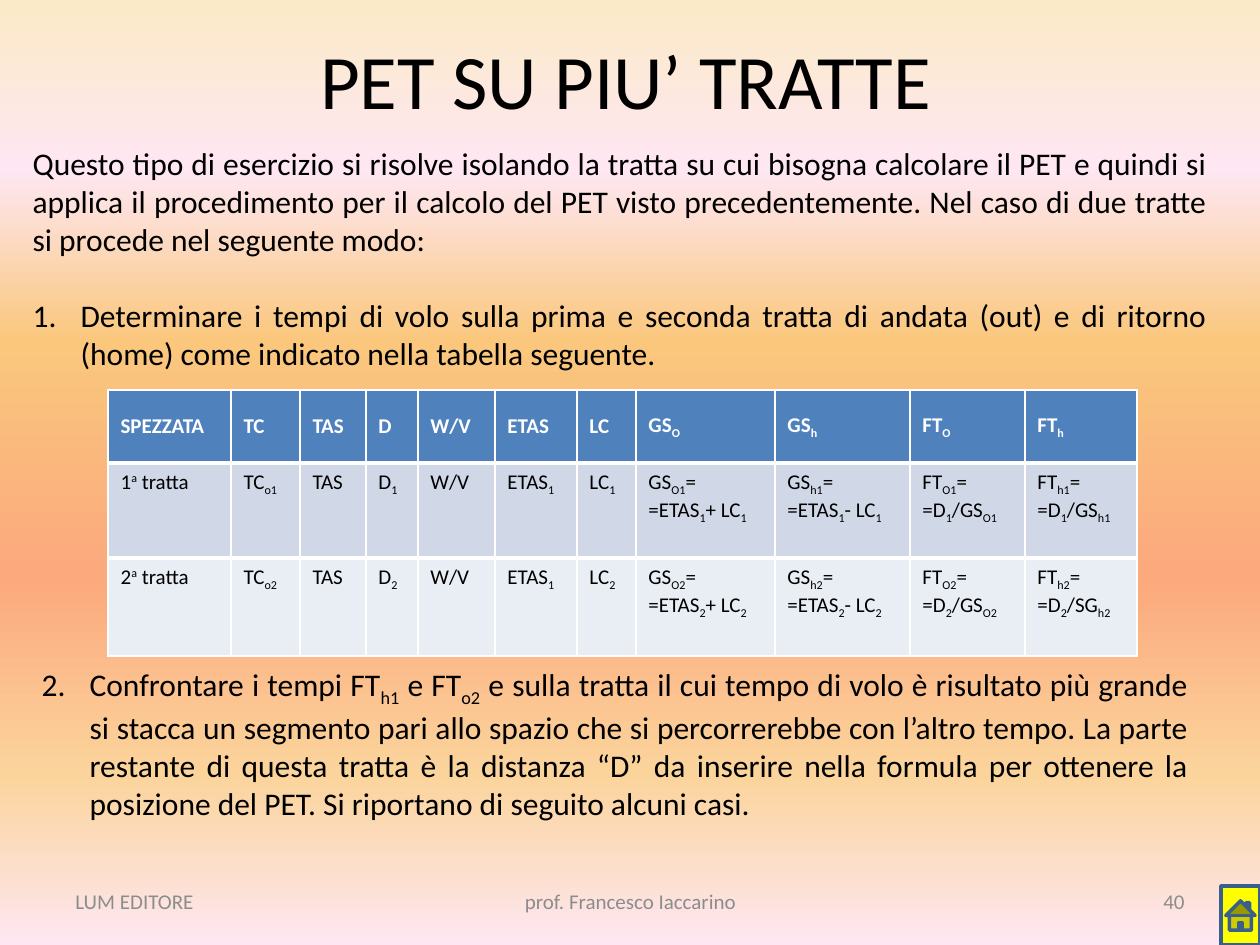
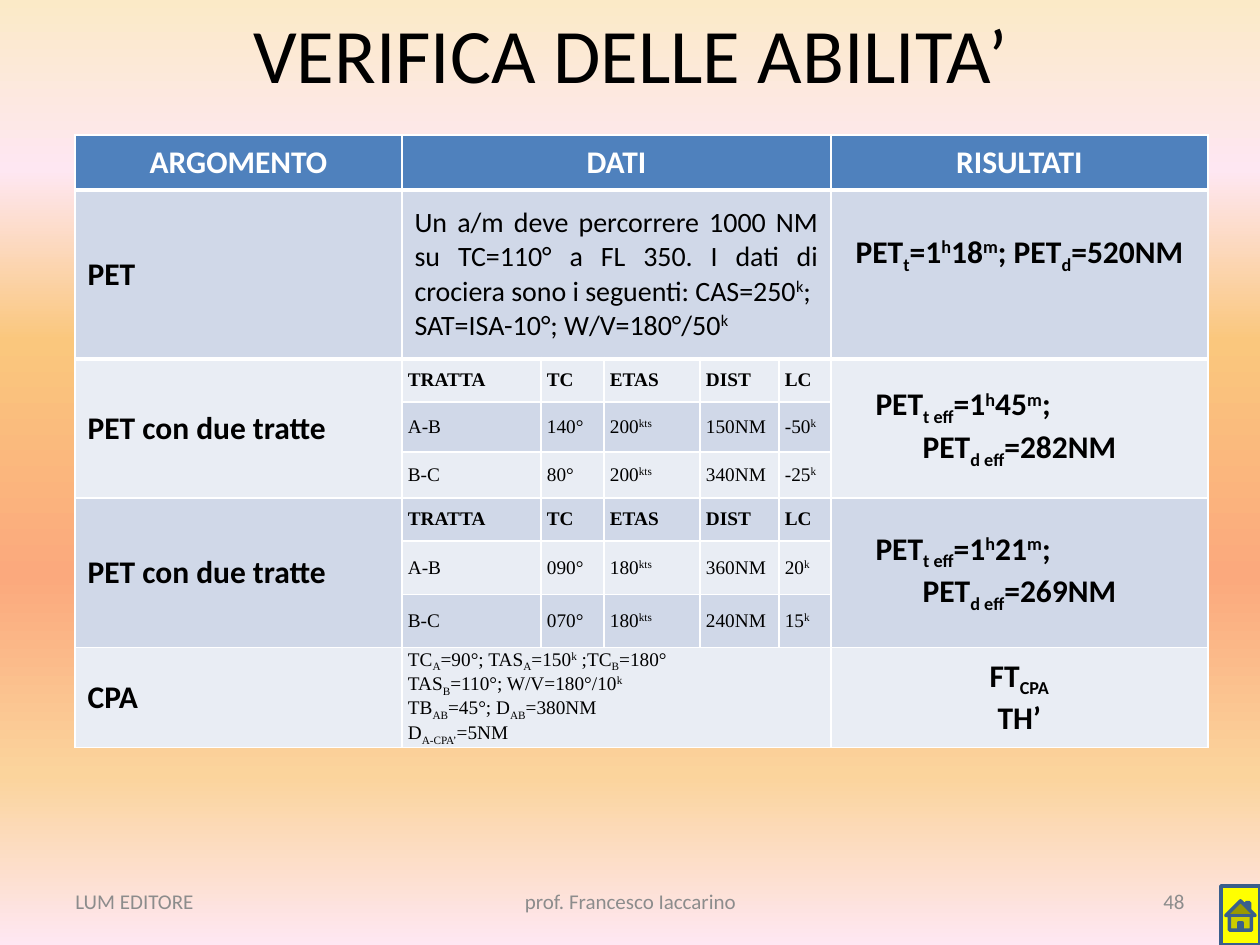
from lxml.etree import SubElement
from pptx import Presentation
from pptx.dml.color import RGBColor
from pptx.enum.shapes import MSO_SHAPE
from pptx.enum.text import MSO_ANCHOR, MSO_AUTO_SIZE, PP_ALIGN
from pptx.oxml.ns import qn
from pptx.util import Emu, Pt

PX_PER_INCH = 126
SLIDE_BOX = (0, 0, 1260, 945)
BLACK, WHITE, GREY = "000000", "FFFFFF", "8C8C8C"
HEADER_FILL, BAND_FILLS = "4F81BD", ("E9EDF4", "D0D8E8")
BACKGROUND_STOPS = [(0, "FBEAC7"), (18, "FEE7F2"), (36, "FAC77D"),
                    (61, "FBA97D"), (82, "FBD49C"), (100, "FEE7F2")]
BASELINES = {"_": "-25000", "^": "30000"}
LEFT, CENTER, RIGHT, JUSTIFY = (PP_ALIGN.LEFT, PP_ALIGN.CENTER,
                                PP_ALIGN.RIGHT, PP_ALIGN.JUSTIFY)
LABEL_STYLE = {"size": 18, "bold": True}
RESULT_STYLE = {"size": 18, "bold": True, "align": CENTER}
LEG_STYLE = {"size": 11, "font": "Times New Roman"}

LEG_COLUMNS = [123, 69, 66, 52, 77, 82, 59, 139, 135, 115, 112]
LEG_ROWS = [73, 95, 98]
LEG_HEADER = ["SPEZZATA", "TC", "TAS", "D", "W/V", "ETAS", "LC",
              "GS{_O}", "GS{_h}", "FT{_O}", "FT{_h}"]

SKILL_COLUMNS = [327, 139, 63, 96, 79, 52, 377]
SKILL_ROWS = [55, 169, 43, 50, 46, 43, 54, 53, 100]
TWO_LEGS = "PET con due tratte"
LEG_TITLES = ["TRATTA", "TC", "ETAS", "DIST", "LC"]
SKILL_TEXTS = [
    ["ARGOMENTO", "DATI", "", "", "", "", "RISULTATI"],
    ["PET",
     "Un a/m deve percorrere 1000 NM su TC=110° a FL 350. I dati di crociera "
     "sono i seguenti: CAS=250{^k};\nSAT=ISA-10°; W/V=180°/50{^k}",
     "", "", "", "", "PET{_t}=1{^h}18{^m}; PET{_d}=520NM"],
    [TWO_LEGS, *LEG_TITLES, "PET{_t eff}=1{^h}45{^m};\nPET{_d eff}=282NM"],
    ["", "A-B", "140°", "200{^kts}", "150NM", "-50{^k}", ""],
    ["", "B-C", "80°", "200{^kts}", "340NM", "-25{^k}", ""],
    [TWO_LEGS, *LEG_TITLES, "PET{_t eff}=1{^h}21{^m};\nPET{_d eff}=269NM"],
    ["", "A-B", "090°", "180{^kts}", "360NM", "20{^k}", ""],
    ["", "B-C", "070°", "180{^kts}", "240NM", "15{^k}", ""],
    ["CPA",
     "TC{_A}=90°; TAS{_A}=150{^k} ;TC{_B}=180°\n"
     "TAS{_B}=110°; W/V=180°/10{^k}\n"
     "TB{_AB}=45°; D{_AB}=380NM\nD{_A-CPA’}=5NM",
     "", "", "", "", "FT{_CPA}\nTH’"],
]
WIDE_ROWS = (0, 1, 8)
LEG_BLOCKS = (2, 5)

INTRO = ("Questo tipo di esercizio si risolve isolando la tratta su cui bisogna "
         "calcolare il PET e quindi si applica il procedimento per il calcolo del "
         "PET visto precedentemente. Nel caso di due tratte si procede nel "
         "seguente modo:")
FIRST_STEP = ("Determinare i tempi di volo sulla prima e seconda tratta di andata "
              "(out) e di ritorno (home) come indicato nella tabella seguente.")
SECOND_STEP = ("Confrontare i tempi FT{_h1} e FT{_o2} e sulla tratta il cui tempo "
               "di volo è risultato più grande si stacca un segmento pari allo "
               "spazio che si percorrerebbe con l’altro tempo. La parte restante di "
               "questa tratta è la distanza “D” da inserire nella formula per "
               "ottenere la posizione del PET. Si riportano di seguito alcuni casi.")


def px(length):
    """Turn px into EMU."""
    return Emu(round(length * 914400 / PX_PER_INCH))


def color(hex_string):
    """Turn a hex string into a colour."""
    return RGBColor.from_string(hex_string)


def write(text_frame, text, size, align=LEFT, font="Calibri", ink=BLACK, bold=False):
    """Write lines in which {_x} is subscript and {^x} is superscript."""
    text_frame.text = ""
    for number, line in enumerate(text.split("\n")):
        paragraph = text_frame.add_paragraph() if number else text_frame.paragraphs[0]
        paragraph.alignment = align
        for index, piece in enumerate(line.replace("}", "{").split("{")):
            if not piece:
                continue
            run = paragraph.add_run()
            run.text = piece[1:] if index % 2 else piece
            run.font.name, run.font.size, run.font.bold = font, Pt(size), bold
            run.font.color.rgb = color(ink)
            if index % 2:
                run._r.get_or_add_rPr().set("baseline", BASELINES[piece[0]])


def place(shape, box):
    """Move a shape to a box of px."""
    shape.left, shape.top, shape.width, shape.height = map(px, box)


def set_indent(paragraph, margin, hanging=0, number=None):
    """Indent a paragraph and give it a number or no bullet."""
    properties = paragraph._p.get_or_add_pPr()
    properties.set("marL", str(px(margin)))
    properties.set("indent", str(-px(hanging)))
    if number:
        SubElement(properties, qn("a:buAutoNum"), type="arabicPeriod",
                   startAt=str(number))
    else:
        SubElement(properties, qn("a:buNone"))


def add_background(master):
    """Paint the shared vertical gradient."""
    fill = master.background.fill
    fill.gradient()
    fill.gradient_angle = 270
    stops = master._element.find(".//" + qn("p:bg")).find(".//" + qn("a:gsLst"))
    for stop in list(stops):
        stops.remove(stop)
    for position, hex_string in BACKGROUND_STOPS:
        stop = SubElement(stops, qn("a:gs"), pos=str(position * 1000))
        SubElement(stop, qn("a:srgbClr"), val=hex_string)


def add_title(slide, box, text):
    """Fill and move the title placeholder."""
    title = slide.shapes.title
    place(title, box)
    title.text_frame.vertical_anchor = MSO_ANCHOR.MIDDLE
    write(title.text_frame, text, 44, CENTER)


def add_steps(placeholder, box, text, numbers):
    """Fill a body placeholder; numbers holds one step number or None a line."""
    place(placeholder, box)
    frame = placeholder.text_frame
    frame.auto_size = MSO_AUTO_SIZE.NONE
    write(frame, text, 18, JUSTIFY)
    for paragraph, number in zip(frame.paragraphs, numbers):
        paragraph.space_before = Pt(0)
        paragraph.space_after = Pt(0 if number else 22)
        indent = 48 if number else 0
        set_indent(paragraph, indent, indent, number)


def add_footer(slide, box, page):
    """Add the footer texts and the home button at the bottom of the box."""
    left, top, width, height = box
    bottom = top + height
    for offset, field_width, text, align in [
            (63, 294, "LUM EDITORE", LEFT),
            (431, 399, "prof. Francesco Iaccarino", CENTER),
            (903, 294, page, RIGHT)]:
        field = slide.shapes.add_textbox(px(left + offset), px(bottom - 69),
                                         px(field_width), px(50))
        field.text_frame.word_wrap = True
        field.text_frame.vertical_anchor = MSO_ANCHOR.MIDDLE
        write(field.text_frame, text, 12, align, ink=GREY)
    home = slide.shapes.add_shape(MSO_SHAPE.ACTION_BUTTON_HOME, px(left + width - 39),
                                  px(bottom - 59), px(39), px(59))
    home.shadow.inherit = False
    home.fill.solid()
    home.fill.fore_color.rgb = color("FFFF00")
    home.line.color.rgb = color("3A5F8C")
    home.line.width = Pt(2)


def set_border(cell, side, width):
    """Draw a white line of the given points on one side of a cell."""
    properties = cell._tc.get_or_add_tcPr()
    line = SubElement(properties, qn(f"a:{side}"), w=str(Pt(width)))
    SubElement(SubElement(line, qn("a:solidFill")), qn("a:srgbClr"), val=WHITE)
    properties.insert(0, line)


def add_banded_table(slide, left, top, widths, heights):
    """Add a table with a blue header and alternating rows."""
    table = slide.shapes.add_table(len(heights), len(widths), px(left), px(top),
                                   px(sum(widths)), px(sum(heights))).table
    for column, width in zip(table.columns, widths):
        column.width = px(width)
    for index, (row, height) in enumerate(zip(table.rows, heights)):
        row.height = px(height)
        for cell in row.cells:
            cell.fill.solid()
            cell.fill.fore_color.rgb = color(BAND_FILLS[index % 2] if index else HEADER_FILL)
            cell.vertical_anchor = MSO_ANCHOR.MIDDLE
            if index < 2:
                set_border(cell, ("lnB", "lnT")[index], 3)
    return table


def leg_row(leg, distance_speed):
    """Return the formulas of one leg."""
    n = leg
    return [f"{n}{{^a}} tratta", f"TC{{_o{n}}}", "TAS", f"D{{_{n}}}", "W/V",
            "ETAS{_1}", f"LC{{_{n}}}",
            f"GS{{_O{n}}}=\n=ETAS{{_{n}}}+ LC{{_{n}}}",
            f"GS{{_h{n}}}=\n=ETAS{{_{n}}}- LC{{_{n}}}",
            f"FT{{_O{n}}}=\n=D{{_{n}}}/GS{{_O{n}}}",
            f"FT{{_h{n}}}=\n=D{{_{n}}}/{distance_speed}{{_h{n}}}"]


def add_leg_table(slide, left, top):
    """Add the table of flight times of the two legs."""
    table = add_banded_table(slide, left, top, LEG_COLUMNS, LEG_ROWS)
    for index, texts in enumerate([LEG_HEADER, leg_row(1, "GS"), leg_row(2, "SG")]):
        for cell, text in zip(table.rows[index].cells, texts):
            write(cell.text_frame, text, 12, ink=BLACK if index else WHITE,
                  bold=not index)
            if index:
                cell.vertical_anchor = MSO_ANCHOR.TOP


def skill_style(row, column):
    """Return the text style of a cell in the skills table."""
    if row == 0:
        return {**RESULT_STYLE, "ink": WHITE}
    if column == 0:
        return LABEL_STYLE
    if column == len(SKILL_COLUMNS) - 1:
        return RESULT_STYLE
    if row == 1:
        return {"size": 16, "align": JUSTIFY}
    return {**LEG_STYLE, "bold": row in LEG_BLOCKS}


def add_skill_table(slide, left, top):
    """Add the table of exercises, data and results."""
    table = add_banded_table(slide, left, top, SKILL_COLUMNS, SKILL_ROWS)
    last = len(SKILL_COLUMNS) - 1
    for row in WIDE_ROWS:
        table.cell(row, 1).merge(table.cell(row, last - 1))
    for row in LEG_BLOCKS:
        for column in (0, last):
            table.cell(row, column).merge(table.cell(row + 2, column))
    for row, texts in enumerate(SKILL_TEXTS):
        for column, text in enumerate(texts):
            cell = table.cell(row, column)
            if cell.is_spanned:
                continue
            write(cell.text_frame, text, **skill_style(row, column))
            if row > 1 and 0 < column < last:
                cell.margin_left = cell.margin_right = px(6)
                cell.margin_top = cell.margin_bottom = 0
    table.cell(1, last).margin_bottom = px(46)
    for row in LEG_BLOCKS:
        first_line = table.cell(row, last).text_frame.paragraphs[0]
        first_line.alignment = LEFT
        set_indent(first_line, 32)


def build_method_slide(presentation, box):
    """Build the slide on the PET over several legs."""
    left, top = box[:2]
    slide = presentation.slides.add_slide(presentation.slide_layouts[3])
    add_title(slide, (left + 59, top, 1134, 158), "PET SU PIU’ TRATTE")
    add_leg_table(slide, left + 108, top + 390)
    first_body, second_body = slide.placeholders[1], slide.placeholders[2]
    add_steps(first_body, (left + 20, top + 138, 1200, 242),
              INTRO + "\n" + FIRST_STEP, [None, 1])
    add_steps(second_body, (left + 29, top + 659, 1172, 165), SECOND_STEP, [2])
    add_footer(slide, box, "40")


def build_skills_slide(presentation, box):
    """Build the slide with the skills check."""
    left, top = box[:2]
    slide = presentation.slides.add_slide(presentation.slide_layouts[5])
    add_title(slide, (left + 64, top, 1134, 106), "VERIFICA DELLE ABILITA’")
    add_skill_table(slide, left + 75, top + 135)
    add_footer(slide, box, "48")


def main():
    """Build and save the presentation."""
    presentation = Presentation()
    presentation.slide_width, presentation.slide_height = map(px, SLIDE_BOX[2:])
    add_background(presentation.slide_master)
    build_method_slide(presentation, SLIDE_BOX)
    build_skills_slide(presentation, SLIDE_BOX)
    presentation.save("out.pptx")


if __name__ == "__main__":
    main()
